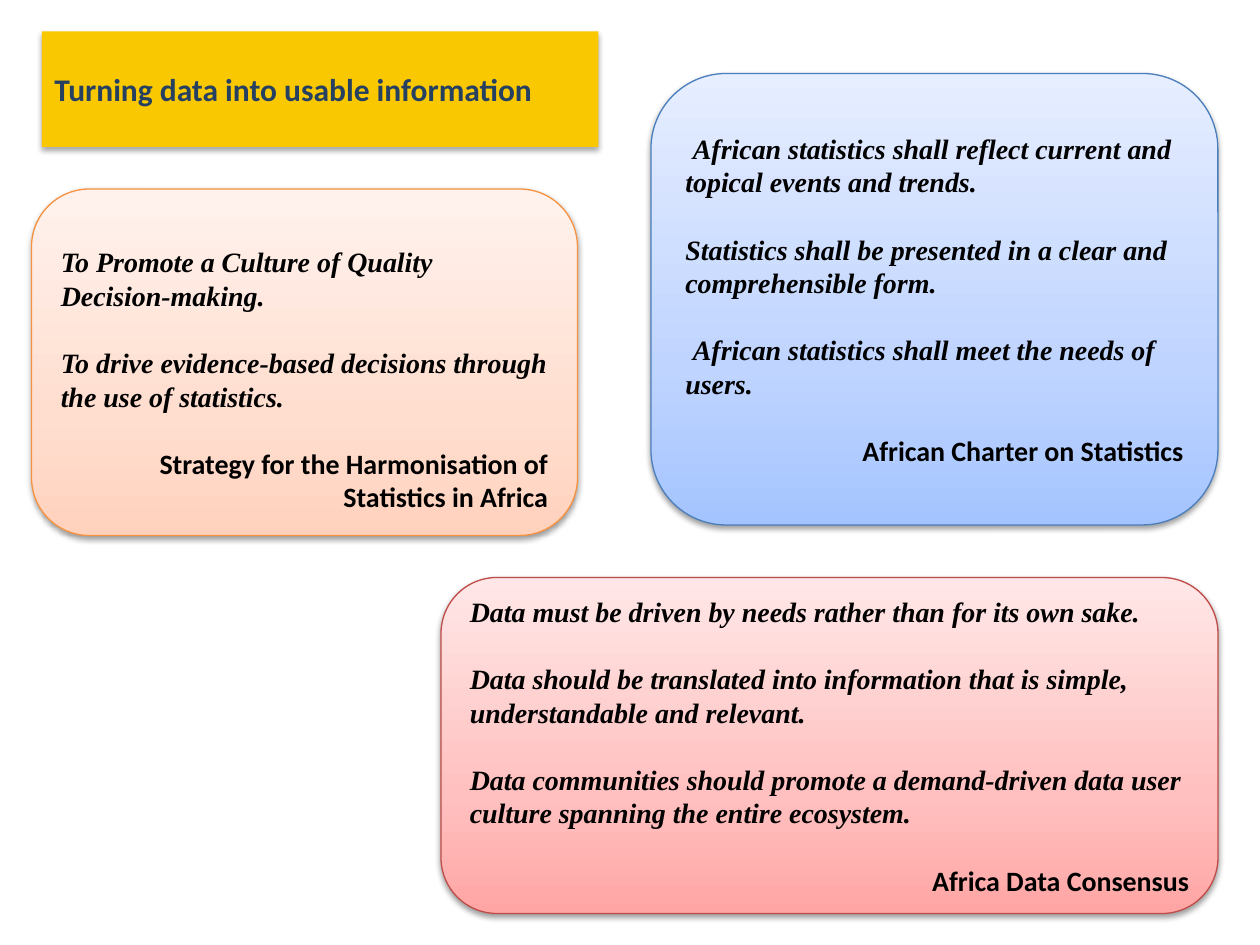
from dataclasses import dataclass

from pptx import Presentation
from pptx.dml.color import RGBColor
from pptx.enum.shapes import MSO_SHAPE as Shape
from pptx.enum.text import MSO_ANCHOR as Anchor, PP_ALIGN as Align
from pptx.oxml import parse_xml
from pptx.oxml.ns import nsdecls, qn
from pptx.util import Inches, Pt

COLS, ROWS = 120, 90
LINE = Pt(19.2)
GOLD = RGBColor(0xFA, 0xC8, 0x00)
NAVY = RGBColor(0x25, 0x40, 0x61)
BLACK = RGBColor(0x00, 0x00, 0x00)
RED = RGBColor(0xBF, 0x4C, 0x48)
BLUE = RGBColor(0x4B, 0x7E, 0xBC)
ORANGE = RGBColor(0xF6, 0x92, 0x40)
REDS = (RGBColor(0xFF, 0xA6, 0xA5), RGBColor(0xFF, 0xC0, 0xBF), RGBColor(0xFF, 0xE7, 0xE7))
BLUES = (RGBColor(0xA4, 0xC4, 0xFF), RGBColor(0xBF, 0xD4, 0xFF), RGBColor(0xE6, 0xEE, 0xFF))
ORANGES = (RGBColor(0xFF, 0xD2, 0xBD), RGBColor(0xFF, 0xDE, 0xD0), RGBColor(0xFF, 0xF2, 0xED))
STOPS = (0, 35, 100)


@dataclass(frozen=True)
class Cell:
    col: int
    row: int
    cols: int
    rows: int


@dataclass(frozen=True)
class Quote:
    cell: Cell
    border: RGBColor
    shades: tuple[RGBColor, ...]
    points: tuple[str, ...]
    source: str
    indented: tuple[int, ...] = ()
    lead_lines: int = 0


TITLE = Cell(4, 3, 53, 11)
QUOTES = (
    Quote(Cell(42, 55, 74, 32), RED, REDS, (
        "Data must be driven by needs rather than for its own sake.",
        "Data should be translated into information that is simple, understandable and relevant.",
        "Data communities should promote a demand-driven data user culture spanning the entire ecosystem.",
    ), "Africa Data Consensus"),
    Quote(Cell(62, 7, 54, 43), BLUE, BLUES, (
        "African statistics shall reflect current and topical events and trends.",
        "Statistics shall be presented in a clear and comprehensible form.",
        "African statistics shall meet the needs of users.",
    ), "African Charter on Statistics", indented=(0, 2)),
    Quote(Cell(3, 18, 52, 33), ORANGE, ORANGES, (
        "To Promote a Culture of Quality Decision-making.",
        "To drive evidence-based decisions through the use of statistics.",
    ), "Strategy for the Harmonisation of Statistics in Africa", lead_lines=1),
)


def shadow_xml(alpha: int, distance: float):
    return parse_xml(
        f'<a:outerShdw {nsdecls("a")} blurRad="{Pt(3.1)}" dist="{Pt(distance)}" '
        f'dir="5400000" rotWithShape="0"><a:srgbClr val="{BLACK}">'
        f'<a:alpha val="{alpha * 1000}"/></a:srgbClr></a:outerShdw>')


def add_box(prs, s, kind: Shape, cell: Cell, alpha: int, distance: float):
    dx, dy = prs.slide_width / COLS, prs.slide_height / ROWS
    sp = s.shapes.add_shape(kind, round(cell.col * dx), round(cell.row * dy),
                            round(cell.cols * dx), round(cell.rows * dy))
    sp.shadow.inherit = False
    sp._element.spPr.find(qn("a:effectLst")).append(shadow_xml(alpha, distance))
    sp.text_frame.word_wrap = True
    sp.text_frame.vertical_anchor = Anchor.MIDDLE
    return sp


def set_gradient(sp, shades: tuple[RGBColor, ...]) -> None:
    stops = "".join(f'<a:gs pos="{pos * 1000}"><a:srgbClr val="{shade}"/></a:gs>'
                    for pos, shade in zip(STOPS, shades))
    sp._element.spPr.find(qn("a:prstGeom")).addnext(parse_xml(
        f'<a:gradFill {nsdecls("a")} rotWithShape="1"><a:gsLst>{stops}</a:gsLst>'
        '<a:lin ang="16200000" scaled="0"/></a:gradFill>'))


def set_font(font, name: str, size: int, color: RGBColor, italic: bool = False) -> None:
    font.name, font.size, font.bold, font.italic = name, Pt(size), True, italic
    font.color.rgb = color


def add_title(prs, s, text: str) -> None:
    sp = add_box(prs, s, Shape.RECTANGLE, TITLE, 35, 1.8)
    sp.fill.solid()
    sp.fill.fore_color.rgb = GOLD
    sp.line.fill.background()
    p = sp.text_frame.paragraphs[0]
    p.alignment = Align.LEFT
    r = p.add_run()
    r.text = text
    set_font(r.font, "Calibri", 18, NAVY)
    effects = parse_xml(f'<a:effectLst {nsdecls("a")}/>')
    effects.append(shadow_xml(43, 3))
    r._r.rPr.find(qn("a:solidFill")).addnext(effects)


def add_quote(prs, s, quote: Quote) -> None:
    sp = add_box(prs, s, Shape.ROUNDED_RECTANGLE, quote.cell, 38, 1.6)
    set_gradient(sp, quote.shades)
    sp.line.color.rgb = quote.border
    sp.line.width = Pt(0.75)
    tf = sp.text_frame
    tf.margin_top += quote.lead_lines * LINE
    for i, text in enumerate((*quote.points, quote.source)):
        is_source = i == len(quote.points)
        p = tf.add_paragraph() if i else tf.paragraphs[0]
        p.text = text
        p.alignment = Align.RIGHT if is_source else Align.LEFT
        p.line_spacing = LINE
        if i:
            p.space_before = LINE
        if i in quote.indented:
            p._p.get_or_add_pPr().set("indent", str(Inches(0.06)))
        set_font(p.font, "Calibri" if is_source else "Times New Roman", 16, BLACK, not is_source)


def main() -> None:
    prs = Presentation()
    prs.slide_width, prs.slide_height = Inches(10), Inches(7.5)
    s = prs.slides.add_slide(prs.slide_layouts[6])
    add_title(prs, s, "Turning data into usable information")
    for quote in QUOTES:
        add_quote(prs, s, quote)
    prs.save("out.pptx")


if __name__ == "__main__":
    main()
